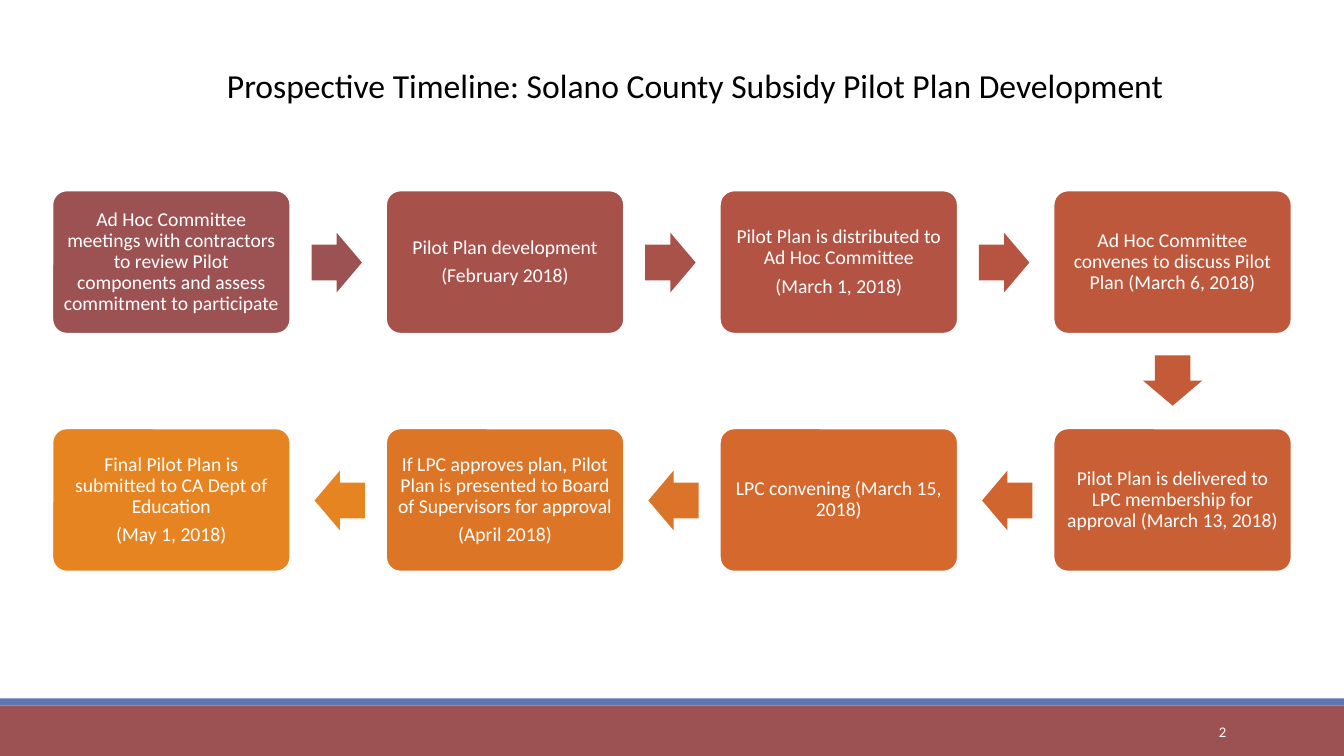
from dataclasses import dataclass
from typing import NamedTuple

from pptx import Presentation
from pptx.dml.color import RGBColor
from pptx.enum.shapes import MSO_SHAPE
from pptx.enum.text import MSO_ANCHOR, PP_ALIGN
from pptx.shapes.autoshape import Shape
from pptx.slide import Slide
from pptx.util import Emu, Pt

EMU_PER_PX = 9144  # 100 px to the inch
SLIDE_WIDTH, SLIDE_HEIGHT = 1333, 750


@dataclass(frozen=True)
class Theme:
    font: str = "Calibri"
    dark: str = "000000"
    light: str = "FFFFFF"
    footer: str = "9C5252"
    stripe: str = "6076B4"
    title_size: float = 24
    step_size: float = 14
    number_size: float = 10.5
    outline: float = 1.25


class Box(NamedTuple):
    left: int
    top: int
    width: int
    height: int


class Direction(NamedTuple):
    x: int
    y: int
    rotation: int


class Step(NamedTuple):
    column: int
    row: int
    fill: str
    lines: tuple[str, ...]
    direction: Direction | None = None
    arrow_fill: str = ""


THEME = Theme()
RIGHT, DOWN, LEFT = Direction(1, 0, 0), Direction(0, 1, 90), Direction(-1, 0, 180)

FIRST_STEP = Box(52, 189, 236, 142)
COLUMN_PITCH, ROW_PITCH = 331, 236
ARROW_LENGTH, ARROW_BREADTH = 50, 59
ARROW_OFFSET = 46  # from the edge of a step to the centre of its arrow
STEP_INSET = 6

STEPS = (
    Step(0, 0, "9C5252",
         ("Ad Hoc Committee meetings with contractors to review Pilot "
          "components and assess commitment to participate",), RIGHT, "9C5252"),
    Step(1, 0, "A7514B", ("Pilot Plan development", "(February 2018)"), RIGHT, "A9524A"),
    Step(2, 0, "B25344",
         ("Pilot Plan is distributed to Ad Hoc Committee", "(March 1, 2018)"),
         RIGHT, "B65441"),
    Step(3, 0, "BD583C",
         ("Ad Hoc Committee convenes to discuss Pilot Plan (March 6, 2018)",),
         DOWN, "C35B38"),
    Step(3, 1, "C95F34",
         ("Pilot Plan is delivered to LPC membership for approval (March 13, 2018)",),
         LEFT, "D0652F"),
    Step(2, 1, "D4682D", ("LPC convening (March 15, 2018)",), LEFT, "DB7328"),
    Step(1, 1, "DD7527",
         ("If LPC approves plan, Pilot Plan is presented to Board of Supervisors "
          "for approval", "(April 2018)"), LEFT, "E68422"),
    Step(0, 1, "E68422",
         ("Final Pilot Plan is submitted to CA Dept of Education", "(May 1, 2018)")),
)


def px(length: int) -> Emu:
    return Emu(length * EMU_PER_PX)


def add_filled_shape(slide: Slide, kind: MSO_SHAPE, box: Box, fill: str,
                     outline: str | None = None) -> Shape:
    shape = slide.shapes.add_shape(kind, *map(px, box))
    shape.shadow.inherit = False
    shape.fill.solid()
    shape.fill.fore_color.rgb = RGBColor.from_string(fill)
    if outline:
        shape.line.color.rgb = RGBColor.from_string(outline)
        shape.line.width = Pt(THEME.outline)
    else:
        shape.line.fill.background()
    return shape


def write_text(shape: Shape, *lines: str, size: float, color: str,
               align: PP_ALIGN = PP_ALIGN.CENTER,
               anchor: MSO_ANCHOR = MSO_ANCHOR.MIDDLE, inset: int | None = None,
               line_spacing: float = 1.0, space_after: float = 0) -> None:
    frame = shape.text_frame
    frame.word_wrap = True
    frame.vertical_anchor = anchor
    if inset is not None:
        frame.margin_left = frame.margin_right = px(inset)
        frame.margin_top = frame.margin_bottom = px(inset)
    for index, line in enumerate(lines):
        paragraph = frame.add_paragraph() if index else frame.paragraphs[0]
        paragraph.alignment = align
        paragraph.line_spacing = line_spacing
        paragraph.space_after = Pt(space_after)
        run = paragraph.add_run()
        run.text = line
        run.font.name = THEME.font
        run.font.size = Pt(size)
        run.font.color.rgb = RGBColor.from_string(color)


def add_arrow(slide: Slide, box: Box, direction: Direction, fill: str) -> None:
    """Place an arrow just outside the step's edge that faces the next step."""
    center_x = box.left + box.width // 2 + direction.x * (box.width // 2 + ARROW_OFFSET)
    center_y = box.top + box.height // 2 + direction.y * (box.height // 2 + ARROW_OFFSET)
    arrow_box = Box(center_x - ARROW_LENGTH // 2, center_y - ARROW_BREADTH // 2,
                    ARROW_LENGTH, ARROW_BREADTH)
    arrow = add_filled_shape(slide, MSO_SHAPE.RIGHT_ARROW, arrow_box, fill)
    arrow.adjustments[0] = 0.6
    arrow.adjustments[1] = 0.5
    arrow.rotation = direction.rotation


def add_step(slide: Slide, step: Step) -> None:
    box = FIRST_STEP._replace(left=FIRST_STEP.left + step.column * COLUMN_PITCH,
                              top=FIRST_STEP.top + step.row * ROW_PITCH)
    shape = add_filled_shape(slide, MSO_SHAPE.ROUNDED_RECTANGLE, box, step.fill, THEME.light)
    shape.adjustments[0] = 0.1
    write_text(shape, *step.lines, size=THEME.step_size, color=THEME.light,
               inset=STEP_INSET, line_spacing=0.9, space_after=5)
    if step.direction:
        add_arrow(slide, box, step.direction, step.arrow_fill)


def add_footer(slide: Slide) -> None:
    add_filled_shape(slide, MSO_SHAPE.RECTANGLE, Box(0, 700, SLIDE_WIDTH, 50), THEME.footer)
    add_filled_shape(slide, MSO_SHAPE.RECTANGLE, Box(0, 693, SLIDE_WIDTH, 7), THEME.stripe)
    number = slide.shapes.add_textbox(*map(px, Box(1083, 706, 143, 40)))
    write_text(number, "2", size=THEME.number_size, color=THEME.light, align=PP_ALIGN.RIGHT)


def add_title(slide: Slide) -> None:
    title = slide.shapes.add_textbox(*map(px, Box(98, 59, 1183, 50)))
    write_text(title, "Prospective Timeline: Solano County Subsidy Pilot Plan Development",
               size=THEME.title_size, color=THEME.dark, anchor=MSO_ANCHOR.TOP)


def main() -> None:
    presentation = Presentation()
    presentation.slide_width = px(SLIDE_WIDTH)
    presentation.slide_height = px(SLIDE_HEIGHT)
    slide = presentation.slides.add_slide(presentation.slide_layouts[6])
    add_footer(slide)
    for step in STEPS:
        add_step(slide, step)
    add_title(slide)
    presentation.save("out.pptx")


if __name__ == "__main__":
    main()
